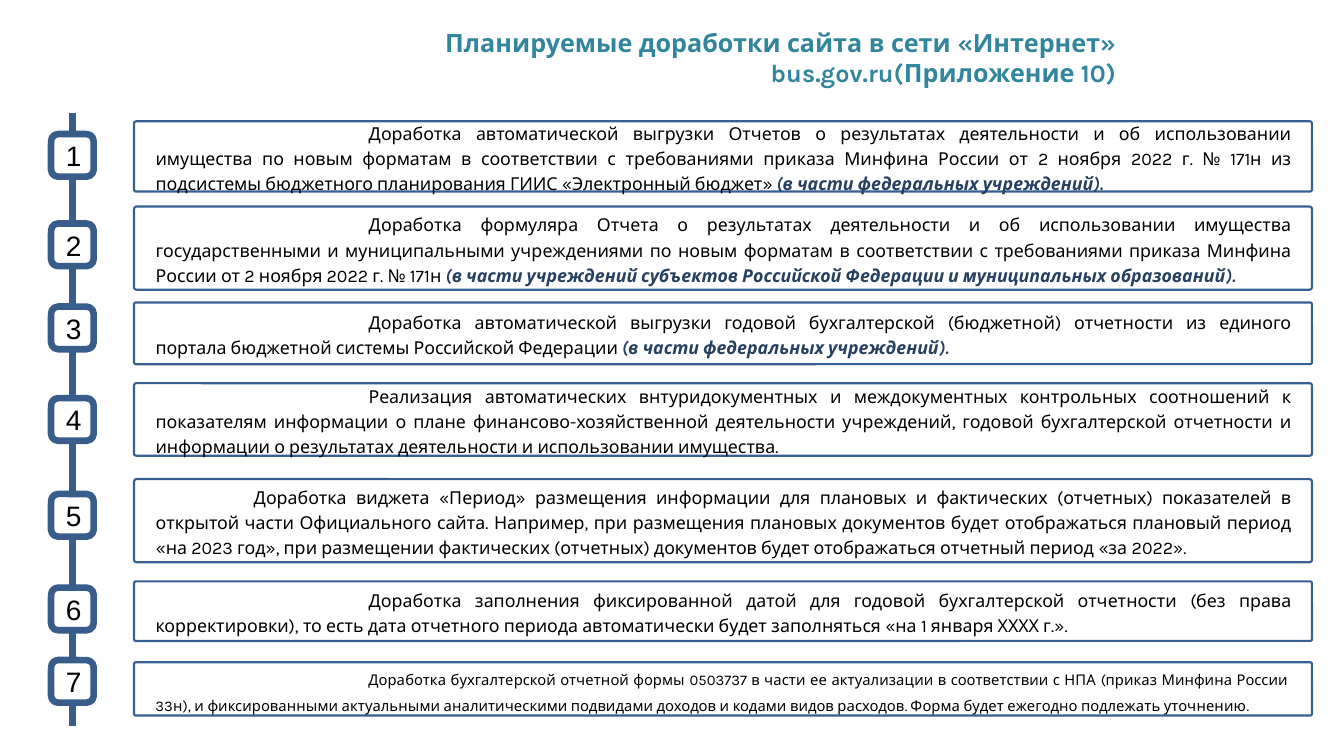
from dataclasses import dataclass

from lxml import etree
from pptx import Presentation
from pptx.dml.color import RGBColor
from pptx.enum.shapes import MSO_CONNECTOR, MSO_SHAPE
from pptx.enum.text import MSO_ANCHOR, PP_ALIGN
from pptx.oxml.ns import qn
from pptx.util import Pt

ROUND_RECT = MSO_SHAPE.ROUNDED_RECTANGLE
STRAIGHT = MSO_CONNECTOR.STRAIGHT
MIDDLE = MSO_ANCHOR.MIDDLE
CENTER, RIGHT, JUSTIFY = PP_ALIGN.CENTER, PP_ALIGN.RIGHT, PP_ALIGN.JUSTIFY

PX = 9144  # 100 px to the inch


@dataclass(frozen=True)
class Theme:
    title: str = "31859C"
    text: str = "000000"
    note: str = "254061"
    card_line: str = "376092"
    rail: str = "385D8A"
    badge_fill: str = "FFFFFF"
    font: str = "Karla"
    badge_font: str = "Arial"
    title_size: float = 8.5
    body_size: float = 6
    small_size: float = 5
    badge_size: float = 9.5
    leading: float = 8.5
    card_width: float = 0.75
    rail_width: float = 2.25


T = Theme()


@dataclass(frozen=True)
class Item:
    badge_top: int
    top: int
    height: int
    text: str
    note: str = ""
    indent: int = 100
    size: float = T.body_size


ITEMS = [
    Item(63, 57, 33,
         "Доработка автоматической выгрузки Отчетов о результатах деятельности и об "
         "использовании имущества по новым форматам в соответствии с требованиями приказа "
         "Минфина России от 2 ноября 2022 г. № 171н из подсистемы бюджетного планирования "
         "ГИИС «Электронный бюджет» ",
         "(в части федеральных учреждений)."),
    Item(105, 97, 39,
         "Доработка формуляра Отчета о результатах деятельности и об использовании имущества "
         "государственными и муниципальными учреждениями по новым форматам в соответствии с "
         "требованиями приказа Минфина России от 2 ноября 2022 г. № 171н ",
         "(в части учреждений субъектов Российской Федерации и муниципальных образований)."),
    Item(144, 142, 29,
         "Доработка автоматической выгрузки годовой бухгалтерской (бюджетной) отчетности из "
         "единого портала бюджетной системы Российской Федерации ",
         "(в части федеральных учреждений)."),
    Item(187, 180, 34,
         "Реализация автоматических внтуридокументных и междокументных контрольных соотношений "
         "к показателям информации о плане финансово-хозяйственной деятельности учреждений, "
         "годовой бухгалтерской отчетности и информации о результатах деятельности и "
         "использовании имущества."),
    Item(232, 225, 39,
         "Доработка виджета «Период» размещения информации для плановых и фактических "
         "(отчетных) показателей в открытой части Официального сайта. Например, при размещения "
         "плановых документов будет отображаться плановый период «на 2023 год», при размещении "
         "фактических (отчетных) документов будет отображаться отчетный период «за 2022».",
         indent=46),
    Item(276, 273, 28,
         "Доработка заполнения фиксированной датой для годовой бухгалтерской отчетности (без "
         "права корректировки), то есть дата отчетного периода автоматически будет заполняться "
         "«на 1 января ХХХХ г.»."),
    Item(310, 311, 25,
         "Доработка бухгалтерской отчетной формы 0503737 в части ее актуализации в соответствии "
         "с НПА (приказ Минфина России 33н), и фиксированными актуальными аналитическими "
         "подвидами доходов и кодами видов расходов. Форма будет ежегодно подлежать уточнению.",
         size=T.small_size),
]


def emu(*lengths):
    return [n * PX for n in lengths]


def write(s, runs, align, size, font=T.font, inset=(10, 5), indent=0, leading=None):
    """Fill a shape with one paragraph; runs are (text, colour, bold, italic)."""
    tf = s.text_frame
    tf.word_wrap = True
    tf.vertical_anchor = MIDDLE
    tf.margin_left = tf.margin_right = inset[0] * PX
    tf.margin_top = tf.margin_bottom = inset[1] * PX
    p = tf.paragraphs[0]
    p.alignment = align
    if leading:
        p.line_spacing = Pt(leading)
    if indent:
        pPr = p._p.get_or_add_pPr()
        pPr.set("marL", "0")
        pPr.set("indent", str(indent * PX))
    for text, color, bold, italic in runs:
        r = p.add_run()
        r.text = text
        r.font.name, r.font.size = font, Pt(size)
        r.font.bold, r.font.italic = bold, italic
        r.font.color.rgb = RGBColor.from_string(color)


def add_frame(slide, box, line, width, fill=None):
    s = slide.shapes.add_shape(ROUND_RECT, *emu(*box))
    s.shadow.inherit = False
    s.line.color.rgb = RGBColor.from_string(line)
    s.line.width = Pt(width)
    if fill:
        s.fill.solid()
        s.fill.fore_color.rgb = RGBColor.from_string(fill)
    else:
        s.fill.background()
    return s


def add_title(slide, box):
    s = slide.shapes.add_textbox(*emu(*box))
    title = "Планируемые доработки сайта в сети «Интернет» bus.gov.ru(Приложение 10)"
    write(s, [(title, T.title, True, False)], RIGHT, T.title_size, inset=(0, 0))


def add_rail(slide, x, top, bottom):
    s = slide.shapes.add_connector(STRAIGHT, *emu(x, top, x, bottom))
    s.line.color.rgb = RGBColor.from_string(T.rail)
    s.line.width = Pt(T.rail_width)
    etree.SubElement(s._element.spPr, qn("a:effectLst"))


def add_badge(slide, box, number):
    s = add_frame(slide, box, T.rail, T.rail_width, T.badge_fill)
    write(s, [(str(number), T.text, False, False)], CENTER, T.badge_size,
          font=T.badge_font, inset=(6, 6))


def add_card(slide, box, item):
    s = add_frame(slide, box, T.card_line, T.card_width)
    s.adjustments[0] = 0.03
    runs = [(item.text, T.text, False, False)]
    if item.note:
        runs.append((item.note, T.note, True, True))
    write(s, runs, JUSTIFY, item.size, indent=item.indent, leading=T.leading)


def add_items(slide, box, badge=20, card_left=39):
    """Numbered rail on the left of the box, one card per item on the right."""
    left, top, width, height = box
    add_rail(slide, left + badge // 2, top, top + height)
    for number, item in enumerate(ITEMS, 1):
        add_card(slide, (left + card_left, item.top, width - card_left, item.height), item)
        add_badge(slide, (left, item.badge_top, badge, badge), number)


def main():
    prs = Presentation()
    prs.slide_width, prs.slide_height = emu(631, 355)
    slide = prs.slides.add_slide(prs.slide_layouts[6])
    add_title(slide, (78, 20, 446, 14))
    add_items(slide, (24, 53, 592, 288))
    prs.save("out.pptx")


if __name__ == "__main__":
    main()
